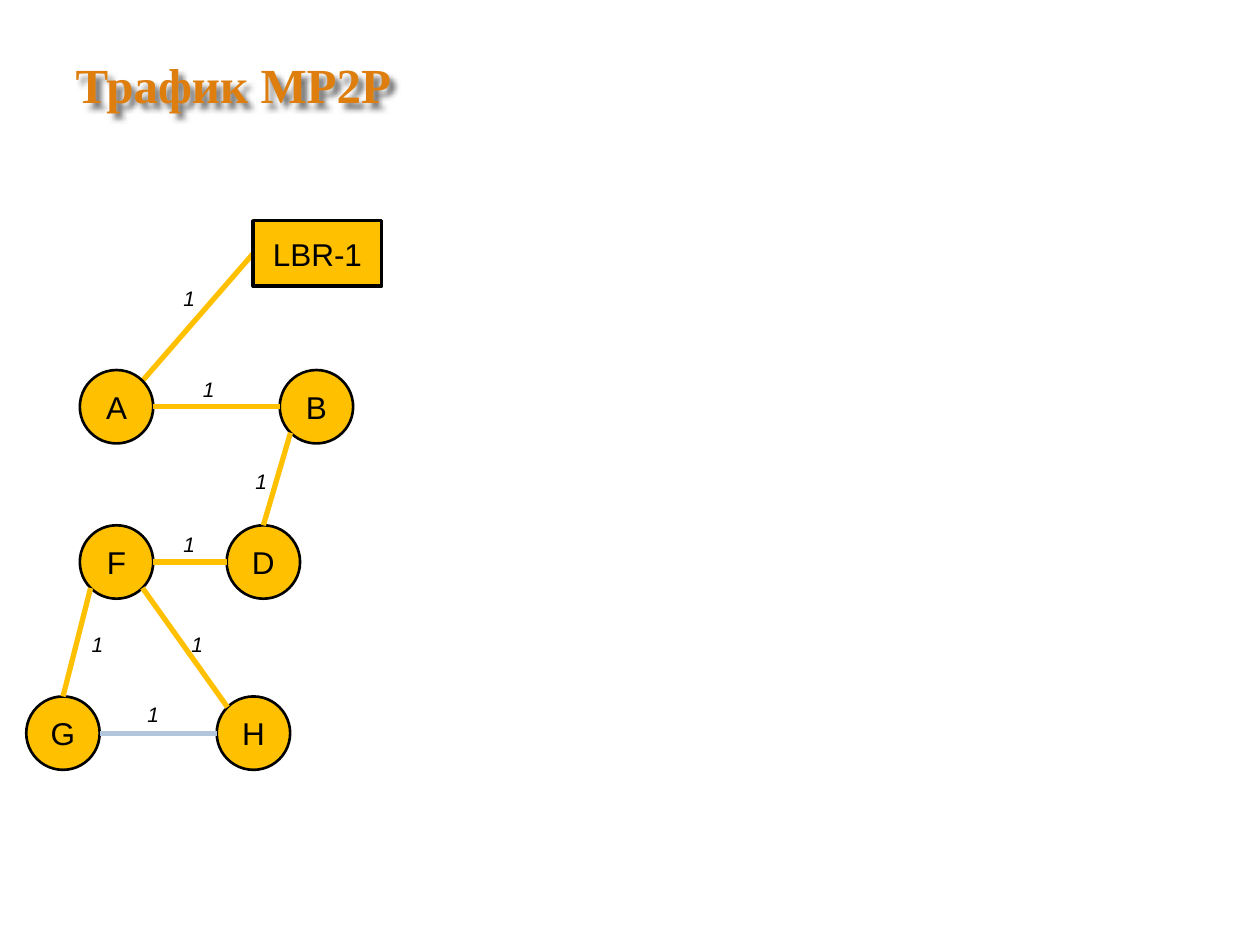
from dataclasses import dataclass
from math import cos, radians, sin

from lxml import etree
from pptx import Presentation
from pptx.dml.color import RGBColor
from pptx.enum.shapes import MSO_CONNECTOR, MSO_SHAPE
from pptx.enum.text import MSO_ANCHOR, MSO_AUTO_SIZE, PP_ALIGN
from pptx.oxml import parse_xml
from pptx.oxml.ns import nsdecls, qn
from pptx.slide import Slide
from pptx.util import Cm, Pt

ELLIPSE, RECTANGLE = MSO_SHAPE.OVAL, MSO_SHAPE.RECTANGLE
STRAIGHT = MSO_CONNECTOR.STRAIGHT
MIDDLE, LEFT, CENTER = MSO_ANCHOR.MIDDLE, PP_ALIGN.LEFT, PP_ALIGN.CENTER
FIT_SHAPE, FIXED = MSO_AUTO_SIZE.SHAPE_TO_FIT_TEXT, MSO_AUTO_SIZE.NONE


@dataclass(frozen=True)
class Theme:
    title_font: str = "Times New Roman"
    label_font: str = "Arial"
    title_size: float = 28
    node_size: float = 18
    cost_size: float = 12
    title: RGBColor = RGBColor(0xDD, 0x7E, 0x0E)
    ink: RGBColor = RGBColor(0, 0, 0)
    active: RGBColor = RGBColor(0xFF, 0xC0, 0x00)
    idle: RGBColor = RGBColor(0xB3, 0xC5, 0xDA)
    link_width: float = 3


THEME = Theme()


@dataclass(frozen=True)
class Node:
    """A network node, placed by its centre, in centimetres."""
    name: str
    x: float
    y: float
    width: float = 1.48
    height: float = 1.48
    outline: float = 1.5
    preset: int = ELLIPSE

    def port(self, angle: float) -> tuple[float, float]:
        """Edge point at a clockwise angle, 0 being the right side."""
        turn = radians(angle)
        return (self.x + self.width / 2 * cos(turn),
                self.y + self.height / 2 * sin(turn))


@dataclass(frozen=True)
class Link:
    """A link between two node ports, with the corner of its cost label."""
    start: Node
    start_angle: float
    end: Node
    end_angle: float
    cost_x: float
    cost_y: float
    cost: str = "1"
    color: RGBColor = THEME.active


# Rows of the network
ROW_AB, ROW_FD, ROW_GH = 8.2, 11.33, 14.78
ROUTER = Node("LBR-1", 6.4, 5.11, 2.59, 1.32, 2, RECTANGLE)
A, B = Node("A", 2.35, ROW_AB), Node("B", 6.38, ROW_AB)
F, D = Node("F", 2.35, ROW_FD), Node("D", 5.31, ROW_FD)
G, H = Node("G", 1.27, ROW_GH), Node("H", 5.11, ROW_GH)
NODES = (ROUTER, A, B, D, F, G, H)

UPLINK = Link(ROUTER, 180, A, -45, 3.45, 5.64)
MESH_LINKS = (
    Link(A, 0, B, 180, 3.84, 7.47),
    Link(B, 135, D, -90, 4.9, 9.32),
    Link(D, 180, F, 0, 3.45, 10.59),
    Link(F, 135, G, -90, 1.6, 12.6),
    Link(F, 45, H, -135, 3.61, 12.6),
    Link(G, 0, H, 180, 2.72, 14.02, color=THEME.idle),
)


def add_title(slide: Slide, text: str) -> None:
    title = slide.shapes.title
    title.left, title.top, title.width, title.height = (
        Cm(1.27), Cm(0.46), Cm(23.5), Cm(2.46))
    title.text_frame.text = text
    title.text_frame.auto_size = FIXED
    title.text_frame.vertical_anchor = MIDDLE
    paragraph = title.text_frame.paragraphs[0]
    paragraph.alignment = LEFT
    font = paragraph.font
    font.name, font.size, font.bold = THEME.title_font, Pt(THEME.title_size), True
    font.color.rgb = THEME.title
    # Soft shadow down and to the right
    title._element.spPr.append(parse_xml(
        f'<a:effectLst {nsdecls("a")}>'
        '<a:outerShdw blurRad="38100" dist="50800" dir="2700000" algn="tl">'
        '<a:srgbClr val="000000"><a:alpha val="55000"/></a:srgbClr>'
        '</a:outerShdw></a:effectLst>'))


def add_node(slide: Slide, node: Node) -> None:
    shape = slide.shapes.add_shape(
        node.preset, Cm(node.x - node.width / 2), Cm(node.y - node.height / 2),
        Cm(node.width), Cm(node.height))
    shape.shadow.inherit = False
    shape.fill.solid()
    shape.fill.fore_color.rgb = THEME.active
    shape.line.color.rgb = THEME.ink
    shape.line.width = Pt(node.outline)
    frame = shape.text_frame
    frame.text, frame.vertical_anchor = node.name, MIDDLE
    paragraph = frame.paragraphs[0]
    paragraph.alignment = CENTER
    font = paragraph.font
    font.name, font.size = THEME.label_font, Pt(THEME.node_size)
    font.color.rgb = THEME.ink


def add_link(slide: Slide, link: Link) -> None:
    ends = link.start.port(link.start_angle) + link.end.port(link.end_angle)
    line = slide.shapes.add_connector(STRAIGHT, *(Cm(value) for value in ends))
    line.line.color.rgb = link.color
    line.line.width = Pt(THEME.link_width)
    etree.SubElement(line._element.spPr, qn("a:effectLst"))


def add_cost(slide: Slide, link: Link) -> None:
    label = slide.shapes.add_textbox(
        Cm(link.cost_x), Cm(link.cost_y), Cm(0.76), Cm(0.76))
    frame = label.text_frame
    frame.text, frame.word_wrap, frame.auto_size = link.cost, False, FIT_SHAPE
    font = frame.paragraphs[0].font
    font.name, font.size, font.italic = THEME.label_font, Pt(THEME.cost_size), True
    font.color.rgb = THEME.ink


def main() -> None:
    deck = Presentation()
    deck.slide_width, deck.slide_height = Cm(25.4), Cm(19.05)
    slide = deck.slides.add_slide(deck.slide_layouts.get_by_name("Title Only"))
    add_title(slide, "Трафик MP2P")

    # The uplink runs under the nodes, the mesh links over them
    add_link(slide, UPLINK)
    for node in NODES:
        add_node(slide, node)
    for link in MESH_LINKS:
        add_link(slide, link)

    # Link costs
    for link in (UPLINK, *MESH_LINKS):
        add_cost(slide, link)

    deck.save("out.pptx")


if __name__ == "__main__":
    main()
